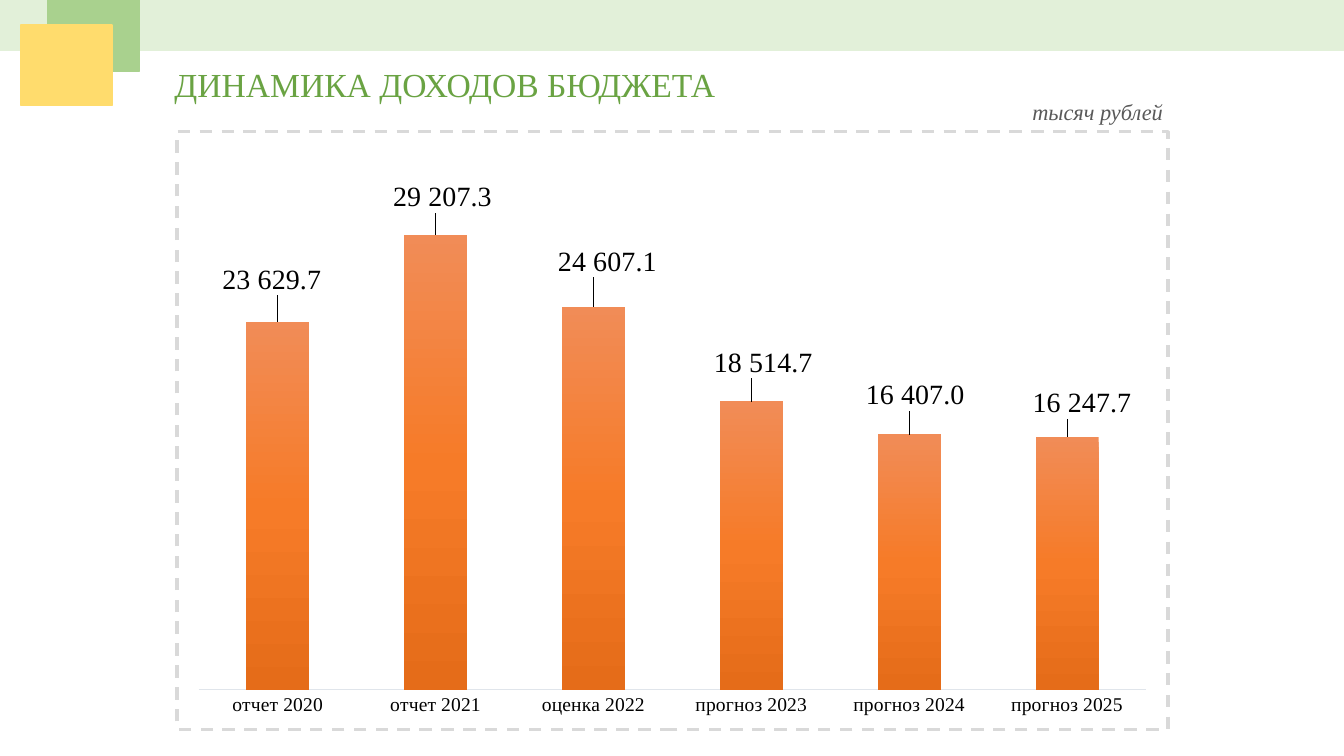
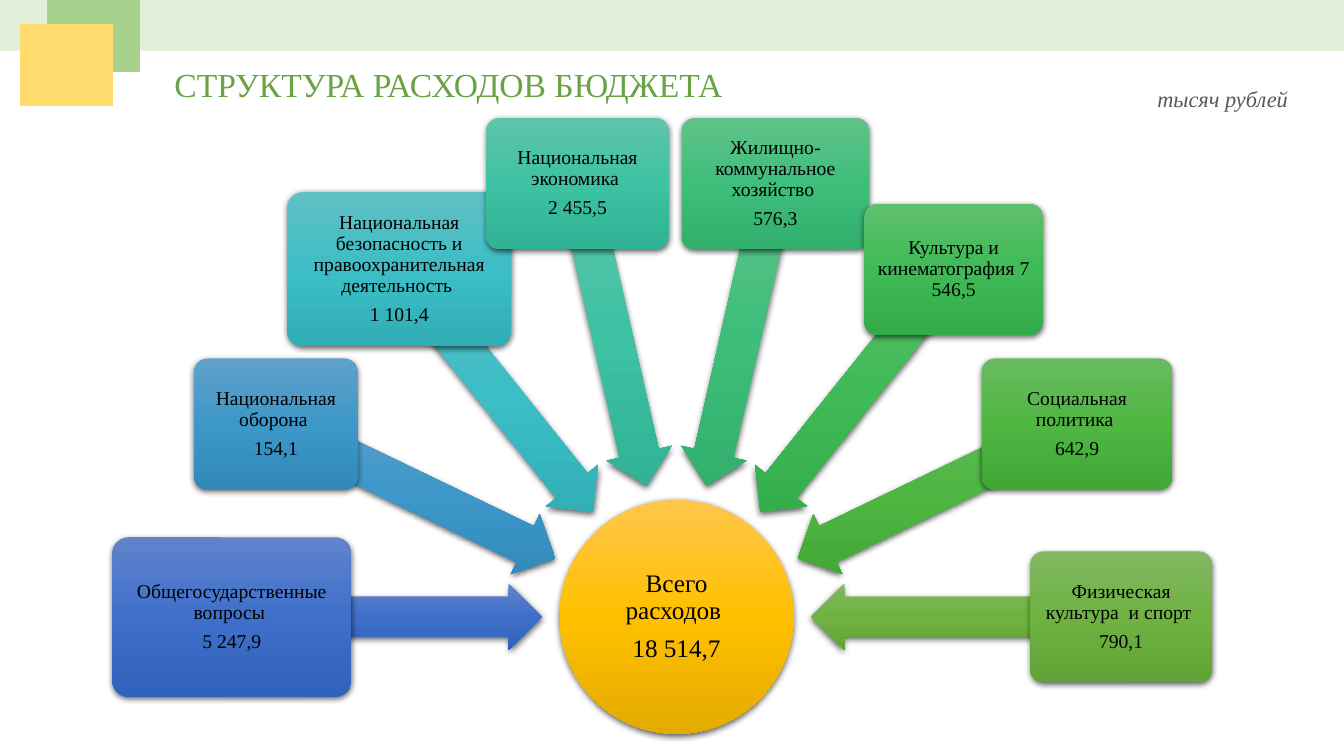
import math

import pptx
import pptx.chart.data
import pptx.dml.color
import pptx.enum.chart
import pptx.enum.shapes
import pptx.enum.text
import pptx.oxml
import pptx.oxml.ns
import pptx.util

Inches, Pt = pptx.util.Inches, pptx.util.Pt
qn, nsdecls = pptx.oxml.ns.qn, pptx.oxml.ns.nsdecls
SHAPE = pptx.enum.shapes.MSO_SHAPE
ALIGN = pptx.enum.text.PP_ALIGN
ANCHOR = pptx.enum.text.MSO_ANCHOR

FONT = "Times New Roman"
UNITS = "тысяч рублей"
NUMBER_FORMAT = "#\\ ##0.0"

# Gradients list their top, middle and bottom colours
COLORS = {
    "title": "6AA343", "units": "595959", "text": "000000",
    "band": "E2F0D9", "green": "A9D18E", "yellow": "FFDC6D",
    "axis": "E0E5EB", "border": "D9D9D9",
    "income": "F18C57 F67B28 E56C19", "total": "FFC64B FFC000 E3AB00",
    "state": "6183CB 3E70CA 3062BB", "defence": "61A1C9 3D97C8 3089B9",
    "security": "61C0C6 3DBDC5 2FAEB6", "economy": "60C4AA 3DC2A3 31B294",
    "housing": "60C28A 3EBE7B 32AE6D", "culture": "60BF6E 3FBA56 33AB49",
    "social": "69BB61 4EB641 41A735", "sport": "81B861 6FB242 62A336",
}

# Year, income, label shift from its usual place (share of the chart size)
INCOME = [
    ("отчет 2020", 23629.7, -0.006, -0.037),
    ("отчет 2021", 29207.3, 0.007, -0.03),
    ("оценка 2022", 24607.1, 0.014, -0.042),
    ("прогноз 2023", 18514.7, 0.012, -0.032),
    ("прогноз 2024", 16407, 0.006, -0.032),
    ("прогноз 2025", 16247.7, 0.015, -0.023),
]

# Colour, box width and height, paragraphs; clockwise from the left
EXPENSES = [
    ("state", 2.37, 1.58, ["Общегосударственные вопросы ", "5 247,9"]),
    ("defence", 1.62, 1.3, ["Национальная оборона ", "154,1"]),
    ("security", 2.22, 1.53,
     ["Национальная безопасность и правоохранительная деятельность ", "1 101,4"]),
    ("economy", 1.81, 1.3, ["Национальная экономика ", "2 455,5"]),
    ("housing", 1.86, 1.3, ["Жилищно-коммунальное хозяйство ", "576,3"]),
    ("culture", 1.77, 1.3, ["Культура и кинематография 7 546,5"]),
    ("social", 1.89, 1.3, ["Социальная политика ", "642,9"]),
    ("sport", 1.8, 1.3, ["Физическая культура  и спорт ", "790,1"]),
]


def rgb(name):
    return pptx.dml.color.RGBColor.from_string(COLORS[name])


def set_format(target, **values):
    for key, value in values.items():
        setattr(target, key, value)


def set_font(font, size, color="text", **extra):
    set_format(font, name=FONT, size=Pt(size), **extra)
    font.color.rgb = rgb(color)


def inches(*lengths):
    return [Inches(length) for length in lengths]


def set_gradient(fill, owner, color):
    """Give the fill inside the owner element a vertical three-colour gradient."""
    fill.gradient()
    gradient = next(owner.iter(qn("a:gradFill")))
    gradient.clear()
    gradient.set("rotWithShape", "0")
    stops = "".join(
        f'<a:gs pos="{i * 50000}"><a:srgbClr val="{shade}"/></a:gs>'
        for i, shade in enumerate(COLORS[color].split()))
    for part in (f'<a:gsLst {nsdecls("a")}>{stops}</a:gsLst>',
                 f'<a:lin {nsdecls("a")} ang="5400000" scaled="0"/>'):
        gradient.append(pptx.oxml.parse_xml(part))


# Parts shared by the slides
def write_line(frame, text, size, color, **extra):
    set_format(frame, text=text, word_wrap=False, vertical_anchor=ANCHOR.TOP,
               auto_size=pptx.enum.text.MSO_AUTO_SIZE.NONE)
    line = frame.paragraphs[0]
    line.alignment = ALIGN.LEFT
    set_font(line.runs[0].font, size, color, **extra)


def add_frame(deck, heading, units_left, units_top):
    slide = deck.slides.add_slide(deck.slide_layouts[5])
    title = slide.shapes.title
    set_format(title, left=Inches(1.63), top=Inches(0.58),
               width=Inches(5.7), height=Inches(0.5))
    write_line(title.text_frame, heading, 24, "title")
    units = slide.shapes.add_textbox(*inches(units_left, units_top, 1.52, 0.37))
    write_line(units.text_frame, UNITS, 16, "units", italic=True)
    for color, box in (("band", (0, 0, 13.33, 0.5)),
                       ("green", (0.47, 0, 0.91, 0.71)),
                       ("yellow", (0.21, 0.25, 0.9, 0.8))):
        block = slide.shapes.add_shape(SHAPE.RECTANGLE, *inches(*box))
        block.shadow.inherit = False
        block.fill.solid()
        block.fill.fore_color.rgb = block.line.color.rgb = rgb(color)
        block.line.width = Pt(1)
    return slide


# Income chart
def shift_label(point, dx, dy):
    """Place a value label relative to its usual place above the column."""
    label = point.data_label
    set_font(label.font, 20)
    label.position = pptx.enum.chart.XL_LABEL_POSITION.OUTSIDE_END


def set_layout(anchor, fields):
    tags = "".join(f'<c:{tag} val="{value}"/>' for tag, value in fields.items())
    layout = pptx.oxml.parse_xml(
        f'<c:layout {nsdecls("c")}><c:manualLayout>{tags}</c:manualLayout></c:layout>')
    anchor.addnext(layout)
    return layout


def add_income_chart(slide, left, top, width, height):
    data = pptx.chart.data.CategoryChartData(number_format=NUMBER_FORMAT)
    data.categories = [row[0] for row in INCOME]
    data.add_series("Series 1", [row[1] for row in INCOME])
    chart = slide.shapes.add_chart(
        pptx.enum.chart.XL_CHART_TYPE.COLUMN_CLUSTERED,
        *inches(left, top, width, height), data).chart
    set_format(chart, has_legend=False, has_title=False)
    set_font(chart.font, 10)
    plot = chart.plots[0]
    set_format(plot, gap_width=150, vary_by_categories=False)

    # Axes
    years, amounts = chart.category_axis, chart.value_axis
    tick_none = pptx.enum.chart.XL_TICK_MARK.NONE
    set_format(years, major_tick_mark=tick_none, minor_tick_mark=tick_none)
    set_font(years.tick_labels.font, 14)
    years.format.line.color.rgb = rgb("axis")
    years.format.line.width = Pt(0.75)
    set_format(amounts, visible=False, has_major_gridlines=False,
               minimum_scale=0, maximum_scale=35000)

    # Columns and their labels
    columns = plot.series[0]
    set_gradient(columns.format.fill, chart.element, "income")
    labels = columns.data_labels
    set_format(labels, show_value=True, number_format=NUMBER_FORMAT,
               number_format_is_linked=False)
    set_font(labels.font, 20)
    for i, (_, _, dx, dy) in enumerate(INCOME):
        shift_label(columns.points[i], dx, dy)
    for label, (_, _, dx, dy) in zip(chart.element.iter(qn("c:dLbl")), INCOME):
        layout = set_layout(label.find(qn("c:idx")), {"x": dx, "y": dy})
        layout.addnext(pptx.oxml.parse_xml(
            f'<c:numFmt {nsdecls("c")} formatCode="{NUMBER_FORMAT}" sourceLinked="0"/>'))

    # Plot area and dashed border
    area = next(chart.element.iter(qn("c:plotArea")))
    for old in area.findall(qn("c:layout")):
        area.remove(old)
    layout = set_layout(area[0], {
        "layoutTarget": "inner", "xMode": "edge", "yMode": "edge",
        "x": 0.022, "y": 0.022, "w": 0.956, "h": 0.912})
    area.insert(0, layout)
    chart.element.find(qn("c:chart")).addnext(pptx.oxml.parse_xml(
        f'<c:spPr {nsdecls("c", "a")}><a:noFill/><a:ln w="{Pt(2.25)}"><a:solidFill>'
        f'<a:srgbClr val="{COLORS["border"]}"/></a:solidFill>'
        '<a:prstDash val="dash"/></a:ln></c:spPr>'))


# Expense diagram
def add_glossy(slide, kind, center, size, color):
    (x, y), (width, height) = center, size
    shape = slide.shapes.add_shape(
        kind, *inches(x - width / 2, y - height / 2, width, height))
    set_gradient(shape.fill, shape.element, color)
    shape.line.fill.background()
    shape.shadow.inherit = False
    next(shape.element.iter(qn("a:effectLst"))).append(pptx.oxml.parse_xml(
        f'<a:outerShdw {nsdecls("a")} blurRad="{Pt(4.5)}" dist="{Pt(1.5)}" '
        'dir="5400000" rotWithShape="0"><a:srgbClr val="000000">'
        '<a:alpha val="63000"/></a:srgbClr></a:outerShdw>'))
    return shape


def write_centered(shape, lines, size, margin):
    frame = shape.text_frame
    sides = ("margin_left", "margin_top", "margin_right", "margin_bottom")
    set_format(frame, text="\n".join(lines), word_wrap=True,
               vertical_anchor=ANCHOR.MIDDLE,
               **dict.fromkeys(sides, Inches(margin)))
    for line in frame.paragraphs:
        set_format(line, alignment=ALIGN.CENTER, line_spacing=0.9,
                   space_after=Pt(size * 0.4))
        set_font(line.runs[0].font, size)


def add_expense_fan(slide, left, top, width, height):
    """Spread the boxes over a half circle, with arrows to the total."""
    total_size = 2.32
    hub_x, hub_y = left + width / 2, top + height - total_size / 2
    total = add_glossy(slide, SHAPE.OVAL, (hub_x, hub_y), (total_size,) * 2, "total")
    write_centered(total, ["Всего расходов ", "18 514,7"], 18, 0.01)
    for i, (color, box_width, box_height, lines) in enumerate(EXPENSES):
        angle = 180 + i * 180 / (len(EXPENSES) - 1)
        dx, dy = math.cos(math.radians(angle)), math.sin(math.radians(angle))
        arrow = add_glossy(slide, SHAPE.LEFT_ARROW,
                           (hub_x + 2.87 * dx, hub_y + 2.87 * dy), (3.07, 0.66), color)
        arrow.rotation = angle
        arrow.adjustments[0], arrow.adjustments[1] = 0.6, 0.5
        box = add_glossy(slide, SHAPE.ROUNDED_RECTANGLE,
                         (hub_x + 4.41 * dx, hub_y + 4.41 * dy),
                         (box_width, box_height), color)
        box.adjustments[0] = 0.1
        write_centered(box, lines, 14, 0.03)


def main():
    deck = pptx.Presentation()
    set_format(deck, slide_width=Inches(13.33), slide_height=Inches(7.5))
    income = add_frame(deck, "ДИНАМИКА ДОХОДОВ БЮДЖЕТА", 10.14, 0.92)
    add_income_chart(income, 1.74, 1.29, 9.86, 5.96)
    expenses = add_frame(deck, "СТРУКТУРА РАСХОДОВ БЮДЖЕТА", 11.38, 0.8)
    add_expense_fan(expenses, 1.11, 1.17, 11.2, 6.11)
    deck.save("out.pptx")


if __name__ == "__main__":
    main()
